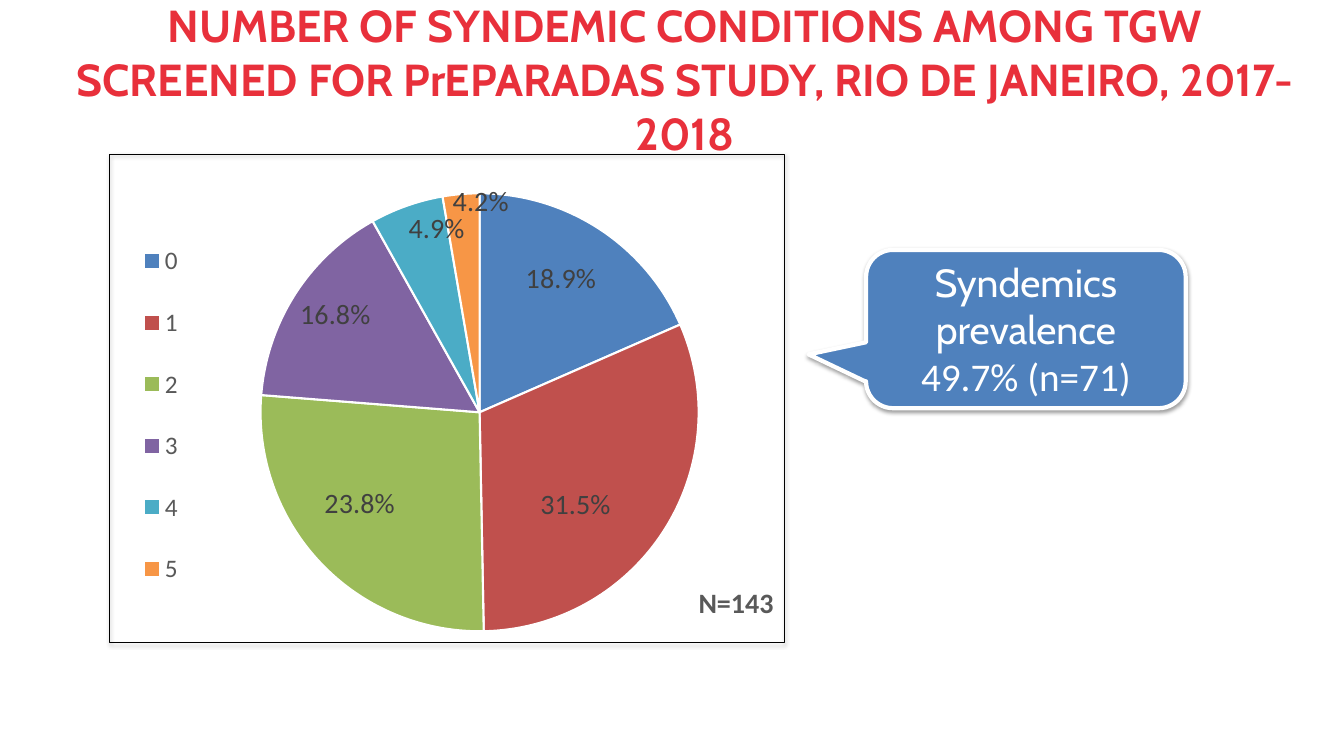
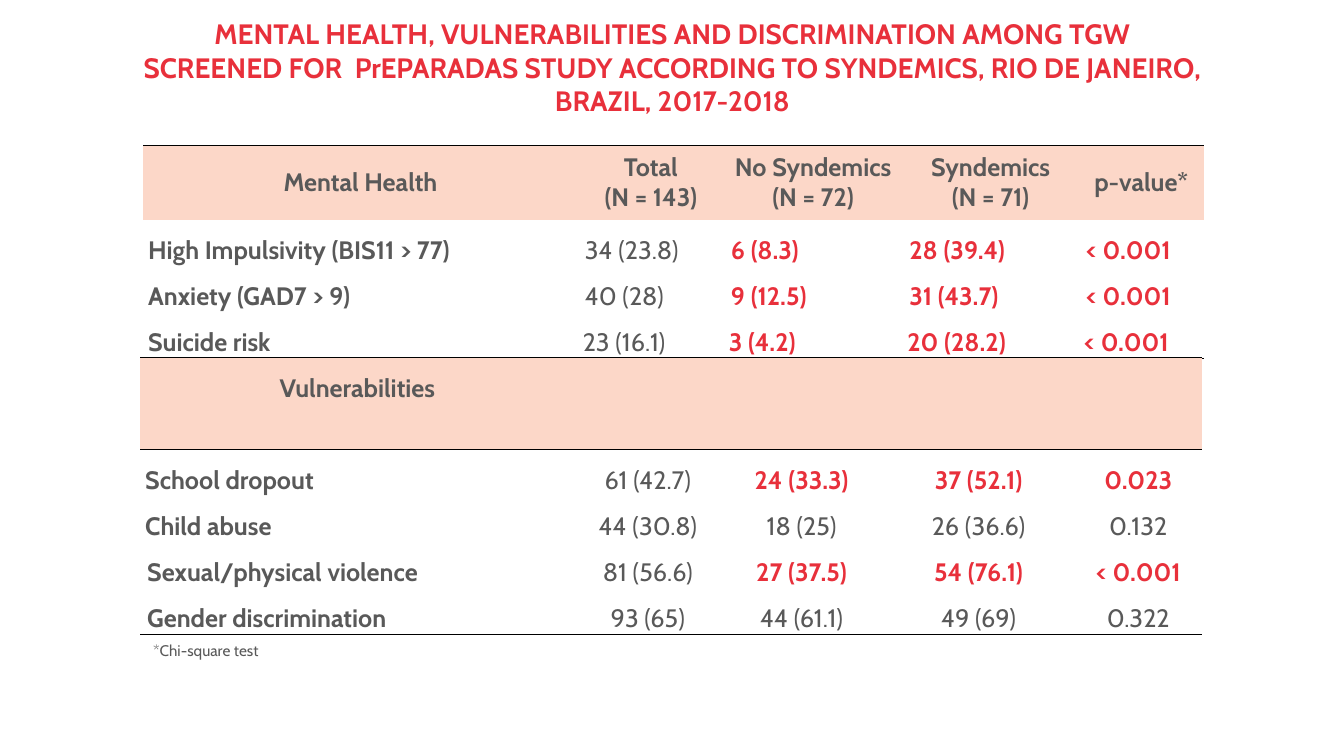
from lxml import etree
from pptx import Presentation
from pptx.chart.data import CategoryChartData as Data
from pptx.dml.color import RGBColor as RGB
from pptx.enum.chart import XL_CHART_TYPE as Kind, XL_LABEL_POSITION as Spot
from pptx.enum.chart import XL_LEGEND_POSITION as Side
from pptx.enum.shapes import MSO_SHAPE as Shape
from pptx.enum.text import MSO_ANCHOR as Anchor, MSO_AUTO_SIZE as Auto, PP_ALIGN as Align
from pptx.oxml import parse_xml
from pptx.oxml.ns import nsdecls, qn
from pptx.util import Inches, Pt

RED, GREY, PEACH = "E8303B", "595959", "FCD7C8"
BLUE, WHITE, BLACK = "4F81BD", "FFFFFF", "000000"
SLICES = [BLUE, "C0504D", "9BBB59", "8064A2", "4BACC6", "F79646"]

COUNTS = [18.4, 31.2, 26.5, 15.6, 5.4, 2.7]
LABELS = ["18.9%", "31.5%", "23.8%", "16.8%", "4.9%", "4.2%"]
SHIFTS = {0: (0, 0.05), 1: (-0.05, -0.01), 2: (0, -0.07), 5: (0.02, -0.03)}

MENTAL = [
    ["Mental Health", "Total\n(N = 143)", "No Syndemics\n(N = 72)",
     "Syndemics\n(N = 71)", "p-value*"],
    ["High Impulsivity (BIS11 > 77)", "34 (23.8)", "6 (8.3)", "28 (39.4)", "< 0.001"],
    ["Anxiety (GAD7 > 9)", "40 (28)", "9 (12.5)", "31 (43.7)", "< 0.001"],
    ["Suicide risk", "23 (16.1)", "3 (4.2)", "20 (28.2)", "< 0.001"],
]
VULNER = [
    ["Vulnerabilities", "", "", "", ""],
    ["School dropout", "61 (42.7)", "24 (33.3)", "37 (52.1)", "0.023"],
    ["Child abuse", "44 (30.8)", "18 (25)", "26 (36.6)", "0.132"],
    ["Sexual/physical violence", "81 (56.6)", "27 (37.5)", "54 (76.1)", "< 0.001"],
    ["Gender discrimination", "93 (65)", "44 (61.1)", "49 (69)", "0.322"],
]
SLIM, MIX, WIDE = (0.05, 0.05), (0.05, 0.07), (0.07, 0.07)


def rgb(code):
    """Turn a hex string into a colour."""
    return RGB.from_string(code)


def style(font, size, color, bold=False, name="Cabin"):
    """Set the look of a font."""
    font.name, font.size, font.bold = name, Pt(size), bold
    font.color.rgb = rgb(color)


def place(box):
    """Convert left, top, width and height to lengths."""
    return [Inches(side) for side in box]


def start(deck, text, box, size):
    """Add a slide with its red title."""
    slide = deck.slides.add_slide(deck.slide_layouts[5])
    title = slide.shapes.title
    title.left, title.top, title.width, title.height = place(box)
    frame = title.text_frame
    frame.text, frame.word_wrap = text, True
    frame.auto_size, frame.vertical_anchor = Auto.NONE, Anchor.MIDDLE
    par = frame.paragraphs[0]
    par.alignment = Align.CENTER
    style(par.font, size, RED, True)
    return slide


def shade(shape, alpha):
    """Give a shape a soft shadow below it."""
    shape.shadow.inherit = False
    glow = shape._element.spPr.find(qn("a:effectLst"))
    glow.append(parse_xml(
        f'<a:outerShdw {nsdecls("a")} blurRad="{Pt(3.1)}" dist="{Pt(1.7)}" '
        f'dir="5400000" rotWithShape="0"><a:srgbClr val="{BLACK}">'
        f'<a:alpha val="{alpha * 1000}"/></a:srgbClr></a:outerShdw>'))


def layout(pairs):
    """Build a manual chart layout from tags and values."""
    root = etree.Element(qn("c:layout"))
    hand = etree.SubElement(root, qn("c:manualLayout"))
    for tag, val in pairs:
        etree.SubElement(hand, qn(f"c:{tag}")).set("val", str(val))
    return root


def fix(node, prior, box, lead=()):
    """Place a chart part by shares of the chart area."""
    for old in node.findall(qn("c:layout")):
        node.remove(old)
    part = layout([*lead, ("xMode", "edge"), ("yMode", "edge"), *zip("xywh", box)])
    node.insert(prior, part)


def add_pie(slide, box):
    """Add the pie of syndemic conditions."""
    data = Data(number_format="0.0")
    data.categories = [str(num) for num in range(len(COUNTS))]
    data.add_series("Series 1", COUNTS)
    chart = slide.shapes.add_chart(Kind.PIE, *place(box), data).chart
    chart.has_title = False
    style(chart.font, 10, BLACK, name="Calibri")
    chart.has_legend = True
    legend = chart.legend
    legend.position, legend.include_in_layout = Side.LEFT, False
    style(legend.font, 18, GREY, name="Calibri")
    fix(legend._element, 1, [0.08, 0.1, 0.05, 0.75])
    plot = chart.plots[0]
    plot.vary_by_categories = True
    fix(plot._element.getparent(), 0, [0.2, 0.06, 0.47, 0.82], [("layoutTarget", "inner")])
    series = plot.series[0]
    for num, (color, text) in enumerate(zip(SLICES, LABELS)):
        point = series.points[num]
        point.format.fill.solid()
        point.format.fill.fore_color.rgb = rgb(color)
        point.format.line.color.rgb = rgb(WHITE)
        point.format.line.width = Pt(1.5)
        label = point.data_label
        label.text_frame.text = text
        style(label.text_frame.paragraphs[0].runs[0].font, 20, "404040", name="Calibri")
        label.position = Spot.INSIDE_END
        if num in SHIFTS:
            label._dLbl.insert(1, layout(zip("xy", SHIFTS[num])))
    tags = series.data_labels
    tags.show_value = tags.show_percentage = True
    tags.position = Spot.INSIDE_END
    style(tags.font, 20, "404040", True, "Calibri")


def add_call(slide, box):
    """Add the callout with the prevalence."""
    call = slide.shapes.add_shape(Shape.ROUNDED_RECTANGULAR_CALLOUT, *place(box))
    for num, val in enumerate([-0.68, 0.16, 0.17]):
        call.adjustments[num] = val
    call.fill.solid()
    call.fill.fore_color.rgb = rgb(BLUE)
    call.line.color.rgb, call.line.width = rgb(WHITE), Pt(3)
    shade(call, 38)
    frame = call.text_frame
    frame.text = "Syndemics prevalence\n49.7% (n=71)"
    frame.vertical_anchor, frame.word_wrap = Anchor.MIDDLE, True
    for par, name in zip(frame.paragraphs, ["Cabin", "Calibri"]):
        par.alignment = Align.CENTER
        style(par.font, 28, WHITE, name=name)


def add_frame(slide, box):
    """Add the thin frame round the pie."""
    frame = slide.shapes.add_shape(Shape.RECTANGLE, *place(box))
    frame.fill.background()
    frame.line.color.rgb, frame.line.width = rgb(BLACK), Pt(0.75)
    shade(frame, 35)


def add_note(slide, box, text, wrap, *look):
    """Add a one-line text box."""
    frame = slide.shapes.add_textbox(*place(box)).text_frame
    frame.text, frame.word_wrap = text, wrap
    style(frame.paragraphs[0].font, *look)


def edge(cell, side, shown):
    """Draw or clear one border of a cell."""
    line = etree.SubElement(cell._tc.get_or_add_tcPr(), qn(f"a:ln{side}"))
    if shown:
        line.set("w", str(Pt(1)))
        fill = etree.SubElement(line, qn("a:solidFill"))
        etree.SubElement(fill, qn("a:srgbClr")).set("val", BLACK)
    else:
        etree.SubElement(line, qn("a:noFill"))


def add_grid(slide, spot, rows, cols, head, rules, align, pads):
    """Add a table whose significant rows are red."""
    step = 0.45
    box = [*spot, sum(cols), head + step * (len(rows) - 1)]
    grid = slide.shapes.add_table(len(rows), len(cols), *place(box)).table
    grid.first_row = grid.horz_banding = False
    for col, wide in zip(grid.columns, cols):
        col.width = Inches(wide)
    two = "\n" in rows[0][1]
    for r, texts in enumerate(rows):
        grid.rows[r].height = Inches(step if r else head)
        tall = two and r == 0
        strong = r > 0 and float(texts[-1].strip("< ")) < 0.05
        for c, text in enumerate(texts):
            cell = grid.cell(r, c)
            for side, shown in zip("LRTB", [False, False, r in rules, r + 1 in rules]):
                edge(cell, side, shown)
            if r:
                cell.fill.background()
            else:
                cell.fill.solid()
                cell.fill.fore_color.rgb = rgb(PEACH)
            cell.margin_left = cell.margin_right = Inches(pads[r][min(c, 1)])
            cell.margin_top = cell.margin_bottom = 0
            cell.vertical_anchor = Anchor.MIDDLE if tall else Anchor.TOP
            cell.text = text
            red = strong and c > 1
            for par in cell.text_frame.paragraphs:
                par.alignment = Align.CENTER if r == 0 else align if c else Align.LEFT
                par.line_spacing = 1.0 if tall else 1.5
                style(par.font, 18, RED if red else GREY, red or r == 0 or c == 0)


def pie_slide(deck):
    """Build the slide with the pie chart."""
    slide = start(deck, "NUMBER OF SYNDEMIC CONDITIONS AMONG TGW SCREENED FOR "
                  "PrEPARADAS STUDY, RIO DE JANEIRO, 2017-2018",
                  [0.58, 0.05, 12.43, 1.46], 32)
    add_pie(slide, [0.59, 1.6, 9.58, 5.3])
    add_call(slide, [8.59, 2.48, 3.17, 1.57])
    add_frame(slide, [1.09, 1.53, 6.69, 4.84])
    add_note(slide, [6.83, 5.76, 0.95, 0.44], "N=143", False, 20, GREY, True, "Calibri")


def table_slide(deck):
    """Build the slide with the two tables."""
    slide = start(deck, "MENTAL HEALTH, VULNERABILITIES AND DISCRIMINATION AMONG TGW "
                  "SCREENED FOR  PrEPARADAS STUDY ACCORDING TO SYNDEMICS, "
                  "RIO DE JANEIRO, BRAZIL, 2017-2018", [1.31, 0.09, 10.72, 1.15], 20)
    add_grid(slide, [1.42, 1.44], MENTAL, [4.31, 1.45, 1.77, 1.75, 1.24],
             0.74, {0, 4}, Align.LEFT, [SLIM, MIX, MIX, SLIM])
    add_grid(slide, [1.39, 3.55], VULNER, [4.31, 1.45, 1.6, 1.91, 1.26],
             0.91, {0, 1, 5}, Align.CENTER, [SLIM, MIX, MIX, WIDE, WIDE])
    add_note(slide, [1.42, 6.31, 10.5, 0.29], "*Chi-square test", True, 11, GREY)


def main():
    """Build and save the deck."""
    deck = Presentation()
    deck.slide_width, deck.slide_height = Inches(13.33), Inches(7.5)
    pie_slide(deck)
    table_slide(deck)
    deck.save("out.pptx")


if __name__ == "__main__":
    main()
